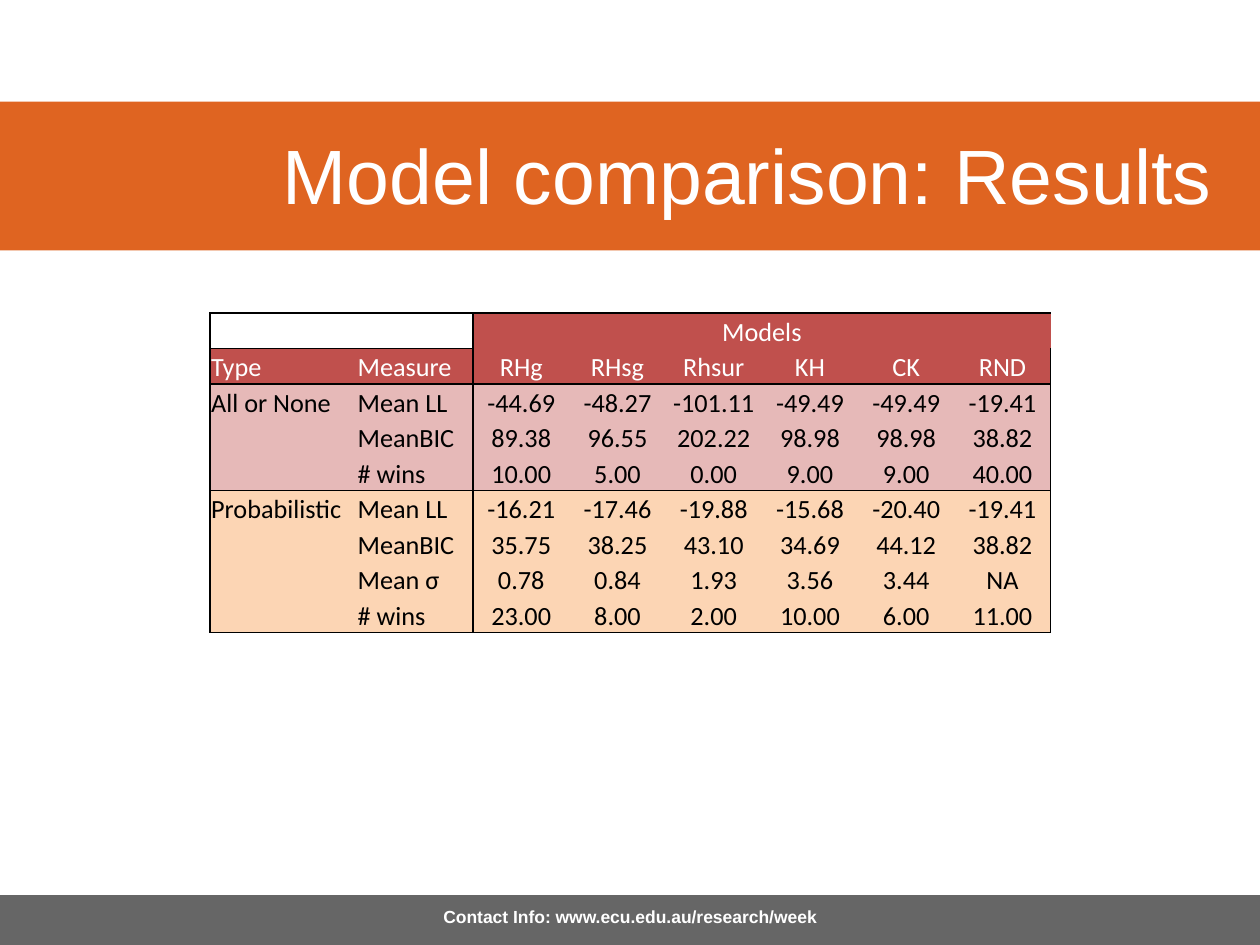
"""Build the model comparison results slide."""
import pptx
import pptx.dml.color
import pptx.enum.shapes
import pptx.enum.text
import pptx.oxml
import pptx.oxml.ns
import pptx.util

Pt = pptx.util.Pt
RGBColor = pptx.dml.color.RGBColor
ALIGN = pptx.enum.text.PP_ALIGN
ANCHOR = pptx.enum.text.MSO_ANCHOR

WHITE = RGBColor(0xFF, 0xFF, 0xFF)
BLACK = RGBColor(0x00, 0x00, 0x00)
ORANGE = RGBColor(0xDF, 0x64, 0x21)
GREY = RGBColor(0x66, 0x66, 0x66)
RED = RGBColor(0xC0, 0x50, 0x4D)
PINK = RGBColor(0xE6, 0xB9, 0xB8)
PEACH = RGBColor(0xFC, 0xD5, 0xB4)

TITLE = "Model comparison: Results"
CONTACT = "Contact Info: www.ecu.edu.au/research/week"
ROWS = [
    ["", "", "Models", "", "", "", "", ""],
    ["Type", "Measure", "RHg", "RHsg", "Rhsur", "KH", "CK", "RND"],
    ["All or None", "Mean LL", "-44.69", "-48.27", "-101.11", "-49.49", "-49.49", "-19.41"],
    ["", "MeanBIC", "89.38", "96.55", "202.22", "98.98", "98.98", "38.82"],
    ["", "# wins", "10.00", "5.00", "0.00", "9.00", "9.00", "40.00"],
    ["Probabilistic", "Mean LL", "-16.21", "-17.46", "-19.88", "-15.68", "-20.40", "-19.41"],
    ["", "MeanBIC", "35.75", "38.25", "43.10", "34.69", "44.12", "38.82"],
    ["", "Mean σ", "0.78", "0.84", "1.93", "3.56", "3.44", "NA"],
    ["", "# wins", "23.00", "8.00", "2.00", "10.00", "6.00", "11.00"],
]
LABEL_COLUMNS = 2
# Each outlined region: first row, last row, first column, last column, fill, text colour
REGIONS = [
    (0, 0, 0, 1, None, WHITE),
    (1, 1, 0, 1, RED, WHITE),
    (0, 1, 2, 7, RED, WHITE),
    (2, 4, 0, 1, PINK, BLACK),
    (2, 4, 2, 7, PINK, BLACK),
    (5, 8, 0, 1, PEACH, BLACK),
    (5, 8, 2, 7, PEACH, BLACK),
]
BANDS = [(58.1, 85, ORANGE), (511.6, 28.4, GREY)]
COLUMN_WIDTHS = [83.7, 66.7] + [55] * 6
ROW_HEIGHT = 20.3
TABLE_LEFT, TABLE_TOP = 120, 178.8


def write(frame, text, font="Arial", size=15, color=WHITE, bold=False,
          align=ALIGN.LEFT, anchor=ANCHOR.MIDDLE):
    frame.word_wrap = True
    frame.vertical_anchor = anchor
    para = frame.paragraphs[0]
    para.alignment = align
    span = para.add_run()
    span.text = text
    span.font.name = font
    span.font.size = Pt(size)
    span.font.bold = bold
    span.font.color.rgb = color


def add_border(cell, side, visible):
    paint = f'<a:solidFill><a:srgbClr val="{BLACK}"/></a:solidFill>' if visible else "<a:noFill/>"
    line = f'<a:ln{side} {pptx.oxml.ns.nsdecls("a")} w="{Pt(1)}">{paint}</a:ln{side}>'
    cell._tc.get_or_add_tcPr().append(pptx.oxml.parse_xml(line))


def format_cell(cell, text, column, fill, color, borders):
    cell.margin_left = cell.margin_right = cell.margin_top = Pt(0.7)
    cell.margin_bottom = Pt(0)
    cell.vertical_anchor = ANCHOR.BOTTOM
    for side, visible in borders.items():
        add_border(cell, side, visible)
    if fill is None:
        cell.fill.background()
    else:
        cell.fill.solid()
        cell.fill.fore_color.rgb = fill
    if text:
        align = ALIGN.LEFT if column < LABEL_COLUMNS else ALIGN.CENTER
        write(cell.text_frame, text, font="Calibri", color=color, align=align, anchor=ANCHOR.BOTTOM)
    else:
        end = f'<a:endParaRPr {pptx.oxml.ns.nsdecls("a")} sz="1500"/>'
        cell.text_frame.paragraphs[0]._p.append(pptx.oxml.parse_xml(end))


def add_results(page):
    frame = page.shapes.add_table(len(ROWS), len(COLUMN_WIDTHS), Pt(TABLE_LEFT), Pt(TABLE_TOP),
                                  Pt(sum(COLUMN_WIDTHS)), Pt(ROW_HEIGHT * len(ROWS)))
    table = frame.table
    table.first_row = table.horz_banding = False
    for column, width in zip(table.columns, COLUMN_WIDTHS):
        column.width = Pt(width)
    for row in table.rows:
        row.height = Pt(ROW_HEIGHT)
    for top, bottom, left, right, fill, color in REGIONS:
        for row in range(top, bottom + 1):
            for column in range(left, right + 1):
                borders = {"L": column == left, "R": column == right,
                           "T": row == top, "B": row == bottom}
                format_cell(table.cell(row, column), ROWS[row][column], column, fill, color, borders)
    table.cell(0, LABEL_COLUMNS).merge(table.cell(0, len(COLUMN_WIDTHS) - 1))


def main():
    deck = pptx.Presentation()
    deck.slide_width, deck.slide_height = Pt(720), Pt(540)
    page = deck.slides.add_slide(deck.slide_layouts[5])
    for top, height, color in BANDS:
        band = page.shapes.add_shape(pptx.enum.shapes.MSO_SHAPE.RECTANGLE,
                                     Pt(0), Pt(top), Pt(720), Pt(height))
        band.shadow.inherit = False
        band.fill.solid()
        band.fill.fore_color.rgb = color
        band.line.fill.background()
    contact = page.shapes.add_textbox(Pt(0), Pt(514), Pt(720), Pt(19.4))
    write(contact.text_frame, CONTACT, size=10, bold=True, align=ALIGN.CENTER, anchor=ANCHOR.TOP)
    title = page.shapes.title
    title.left, title.top, title.width, title.height = Pt(19.6), Pt(60), Pt(680.4), Pt(78.5)
    write(title.text_frame, TITLE, size=44, align=ALIGN.RIGHT)
    page.shapes.element.append(title.element)
    add_results(page)
    deck.save("out.pptx")


if __name__ == "__main__":
    main()
